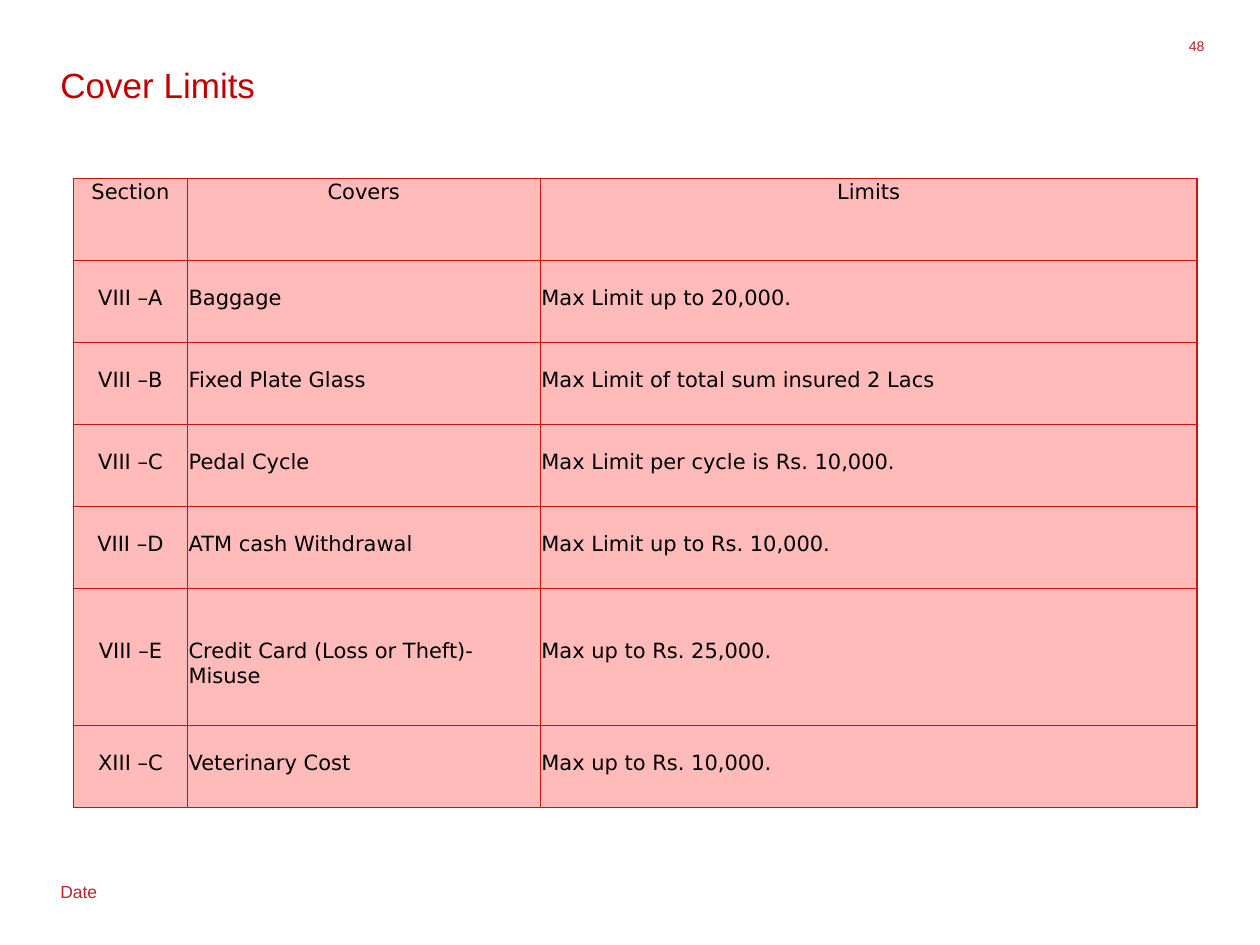
from pptx import Presentation
from pptx.dml.color import RGBColor as RGB
from pptx.enum.text import PP_ALIGN as Align
from pptx.oxml import parse_xml
from pptx.util import Pt

INK = {"title": "C00000", "date": "BE2328", "page": "C21B17",
       "line": "C21612", "fill": "FFBABA", "text": "000000"}
NS = "http://schemas.openxmlformats.org/drawingml/2006/main"


def style(para, face, size, ink):
    para.font.name = face
    para.font.size = Pt(size)
    para.font.color.rgb = RGB.from_string(INK[ink])


def label(text, box, size, ink, wrap=True):
    frame = slide.shapes.add_textbox(*map(Pt, box)).text_frame
    frame.word_wrap = wrap
    para = frame.paragraphs[0]
    para.text = text
    style(para, "Arial", size, ink)
    return frame, para


deck = Presentation()
deck.slide_width, deck.slide_height = Pt(720), Pt(540)
slide = deck.slides.add_slide(deck.slide_layouts[6])

frame, para = label("Date", (27.4, 498.2, 36, 20), 10, "date", False)
para.line_spacing = 1.15
para.space_after = Pt(10)

frame, para = label("48", (672.4, 21.6, 15.8, 14.4), 8, "page")
frame.margin_left = frame.margin_right = 0
frame.margin_top = frame.margin_bottom = 0
para.alignment = Align.RIGHT

frame, para = label("Cover Limits", (27.4, 34.6, 660, 41), 20, "title")
para.line_spacing = Pt(22)

rows = [
    ("Section", "Covers", "Limits"),
    ("VIII –A", "Baggage", "Max Limit up to 20,000."),
    ("VIII –B", "Fixed Plate Glass", "Max Limit of total sum insured 2 Lacs"),
    ("VIII –C", "Pedal Cycle", "Max Limit per cycle is Rs. 10,000."),
    ("VIII –D", "ATM cash Withdrawal", "Max Limit up to Rs. 10,000."),
    ("VIII –E", "Credit Card (Loss or Theft)- Misuse", "Max up to Rs. 25,000."),
    ("XIII –C", "Veterinary Cost", "Max up to Rs. 10,000."),
]
widths = [65.1, 201.6, 375.3]
highs = [46.9] * 5 + [78.3, 46.9]
tops = [0.7] + [14.7] * 4 + [28.7, 14.7]

table = slide.shapes.add_table(
    len(rows), len(widths), Pt(42), Pt(102), Pt(sum(widths)), Pt(sum(highs))).table
for col, width in zip(table.columns, widths):
    col.width = Pt(width)

for r, row in enumerate(rows):
    table.rows[r].height = Pt(highs[r])
    for c, text in enumerate(row):
        cell = table.cell(r, c)
        cell.margin_left = cell.margin_right = Pt(0.7)
        cell.margin_top, cell.margin_bottom = Pt(tops[r]), 0
        para = cell.text_frame.paragraphs[0]
        para.text = text
        para.alignment = Align.CENTER if r == 0 or c == 0 else Align.LEFT
        style(para, "DejaVu Sans", 12, "text")
        para.font.bold = False
        props = cell._tc.get_or_add_tcPr()
        for side in ("lnL", "lnR", "lnT", "lnB"):
            props.append(parse_xml(
                f'<a:{side} xmlns:a="{NS}" w="{Pt(0.75)}"><a:solidFill>'
                f'<a:srgbClr val="{INK["line"]}"/></a:solidFill></a:{side}>'))
        cell.fill.solid()
        cell.fill.fore_color.rgb = RGB.from_string(INK["fill"])

deck.save("out.pptx")
